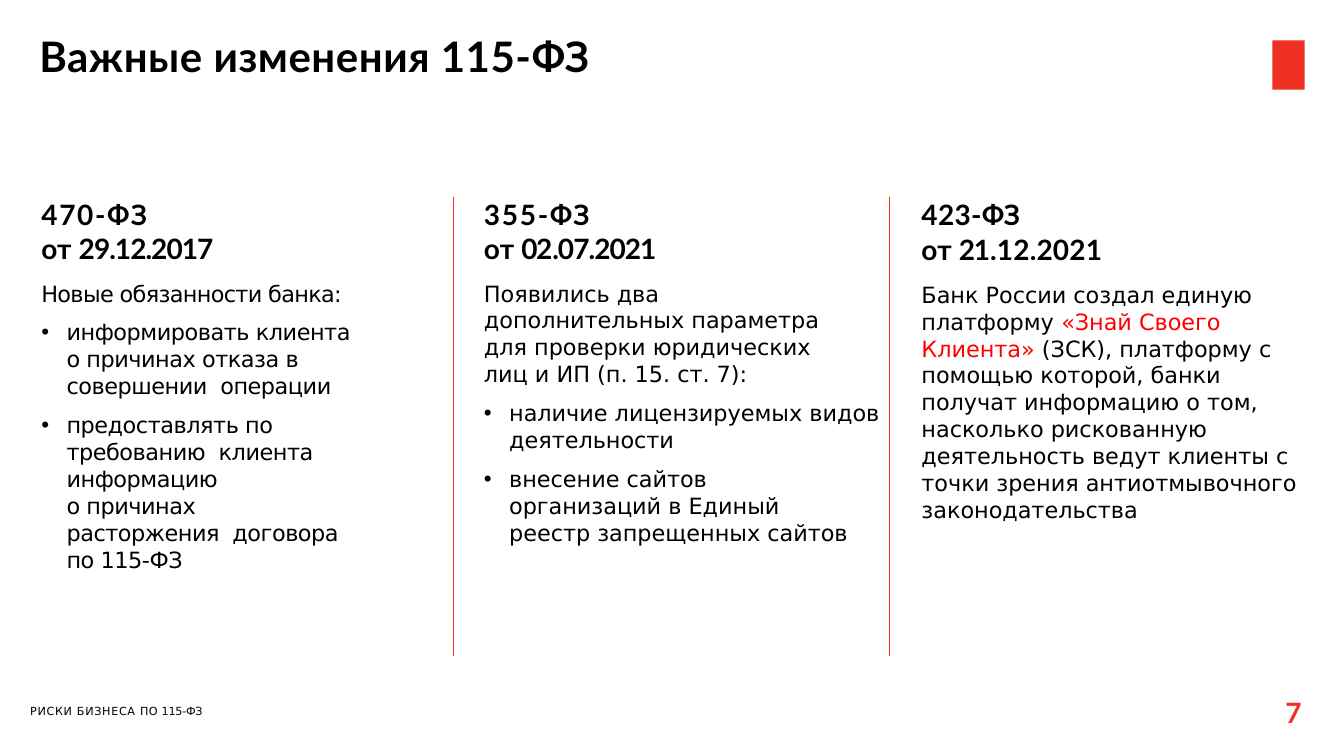
from dataclasses import dataclass

from lxml.etree import SubElement
from pptx import Presentation
from pptx.dml.color import RGBColor
from pptx.enum.shapes import MSO_CONNECTOR, MSO_SHAPE
from pptx.enum.text import MSO_ANCHOR, MSO_AUTO_SIZE, PP_ALIGN
from pptx.oxml.ns import qn
from pptx.util import Inches, Pt

COLORS = {"text": "000000", "brand": "EF3124", "highlight": "FF0000"}
COLUMN_TOP = 1.95
DIVIDER_HEIGHT = 4.56


@dataclass
class Para:
    """One paragraph; each run is (text, letter spacing, optional colour name)."""
    runs: list
    size: float = 16
    font: str = "DejaVu Sans"
    bold: bool = False
    before: float = 0
    left: float = 0.01
    right: float = 0
    bullet: bool = False
    color: str = "text"


def heading(text, spacing):
    return Para([(text, spacing)], 20, "Lato", True, before=1)


def date(*runs, before=0):
    return Para(list(runs), 20, "Lato", True, before)


def item(text, spacing, before=8.6, right=0, bullet=True):
    return Para([(text, spacing)], before=before, left=0.26, right=right, bullet=bullet)


# Column contents
LAW_470 = [
    heading("470-ФЗ", 1.2),
    date(("от ", 0.1), ("29.12.2017", -0.7)),
    Para([("Новые обязанности банка:", -0.45)], before=10.6),
    item("информировать клиента", -0.3),
    item("о причинах отказа в совершении  операции", -0.3, 0.1, 0.9, False),
    item("предоставлять по требованию  клиента информацию", -0.3, 8.7, 0.9),
    item("о причинах расторжения  договора по 115-ФЗ", -0.3, 0.1, 0.9, False),
]
LAW_355 = [
    heading("355-ФЗ", 1.2),
    date(("от ", 0.1), ("02", -1.1), (".07.2021", -0.7)),
    Para([("Появились два дополнительных параметра для проверки юридических "
           "лиц и ИП (п. 15. ст. 7):", 0)], before=10.6, right=0.54),
    item("наличие лицензируемых видов деятельности", 0),
    item("внесение сайтов организаций в Единый реестр запрещенных сайтов", 0, 8.7, 0.3),
]
LAW_423 = [
    heading("423-ФЗ", 0.2),
    date(("от ", 0.1), ("21", -0.9), (".12.2021", 0.1), before=1),
    Para([("Банк России создал единую платформу ", 0),
          ("«Знай Своего Клиента» ", 0, "highlight"),
          ("(ЗСК), платформу с помощью которой, банки получат информацию о том, "
           "насколько рискованную деятельность ведут клиенты с точки зрения "
           "антиотмывочного законодательства", 0)], before=10.6),
]


def rgb(name):
    return RGBColor.from_string(COLORS[name])


def write_paragraph(paragraph, para):
    paragraph.alignment = PP_ALIGN.LEFT
    paragraph.line_spacing = 1.0
    paragraph.space_before = Pt(para.before)
    paragraph.space_after = Pt(0)
    properties = paragraph._p.get_or_add_pPr()
    properties.set("marL", str(Inches(para.left)))
    properties.set("marR", str(Inches(para.right)))
    properties.set("indent", str(Inches(-0.25 if para.bullet else 0)))
    if para.bullet:
        SubElement(properties, qn("a:buChar")).set("char", "•")
    else:
        SubElement(properties, qn("a:buNone"))
    for text, spacing, *color in para.runs:
        run = paragraph.add_run()
        run.text = text
        run.font.size = Pt(para.size)
        run.font.name = para.font
        run.font.bold = para.bold
        run.font.color.rgb = rgb(color[0] if color else para.color)
        run._r.get_or_add_rPr().set("spc", str(round(spacing * 100)))


def fill_text(shape, box, paras, inset=0.01, anchor=MSO_ANCHOR.TOP):
    shape.left, shape.top, shape.width, shape.height = map(Inches, box)
    frame = shape.text_frame
    frame.word_wrap = True
    frame.auto_size = MSO_AUTO_SIZE.SHAPE_TO_FIT_TEXT
    frame.vertical_anchor = anchor
    frame.margin_left = frame.margin_right = frame.margin_bottom = 0
    frame.margin_top = Inches(inset)
    for index, para in enumerate(paras):
        write_paragraph(frame.add_paragraph() if index else frame.paragraphs[0], para)


def add_text(slide, box, paras, **options):
    fill_text(slide.shapes.add_textbox(*map(Inches, box)), box, paras, **options)


def add_divider(slide, x):
    divider = slide.shapes.add_connector(
        MSO_CONNECTOR.STRAIGHT, Inches(x), Inches(COLUMN_TOP),
        Inches(x), Inches(COLUMN_TOP + DIVIDER_HEIGHT))
    divider.line.color.rgb = rgb("brand")
    divider.line.width = Pt(1)
    SubElement(divider._element.spPr, qn("a:effectLst"))


def add_brand_mark(slide):
    mark = slide.shapes.add_shape(MSO_SHAPE.RECTANGLE, Inches(12.62), Inches(0.4),
                                  Inches(0.32), Inches(0.49))
    mark.shadow.inherit = False
    mark.fill.solid()
    mark.fill.fore_color.rgb = rgb("brand")
    mark.line.fill.background()


def main():
    deck = Presentation()
    deck.slide_width, deck.slide_height = Inches(13.33), Inches(7.5)
    slide = deck.slides.add_slide(deck.slide_layouts[3])

    # Title and brand mark
    title = Para([("Важные изменения 115-ФЗ", 0.4)], 30, "Lato", True, before=1)
    fill_text(slide.shapes.title, (0.38, 0.29, 8.75, 0.52), [title],
              anchor=MSO_ANCHOR.MIDDLE)
    add_brand_mark(slide)

    # Three laws with dividers between them
    fill_text(slide.placeholders[1], (0.4, COLUMN_TOP, 3.95, 3.25), LAW_470)
    fill_text(slide.placeholders[2], (4.79, COLUMN_TOP, 3.95, 3.52), LAW_355)
    add_text(slide, (9.13, COLUMN_TOP, 3.8, 3.7), LAW_423)
    for x in (4.5, 8.82):
        add_divider(slide, x)

    # Footer and page number
    footer = Para([("РИСКИ БИЗНЕСА ", 0.45), ("ПО ", 0.1), ("115-ФЗ", -0.2)], 8, before=2.6)
    add_text(slide, (0.29, 6.95, 4.5, 0.17), [footer], inset=0.04,
             anchor=MSO_ANCHOR.MIDDLE)
    page = Para([("7", 0.7)], 20, "Lato", True, before=5.2, left=0.04, color="brand")
    add_text(slide, (12.71, 6.83, 0.27, 0.41), [page], inset=0.07)

    deck.save("out.pptx")


if __name__ == "__main__":
    main()
